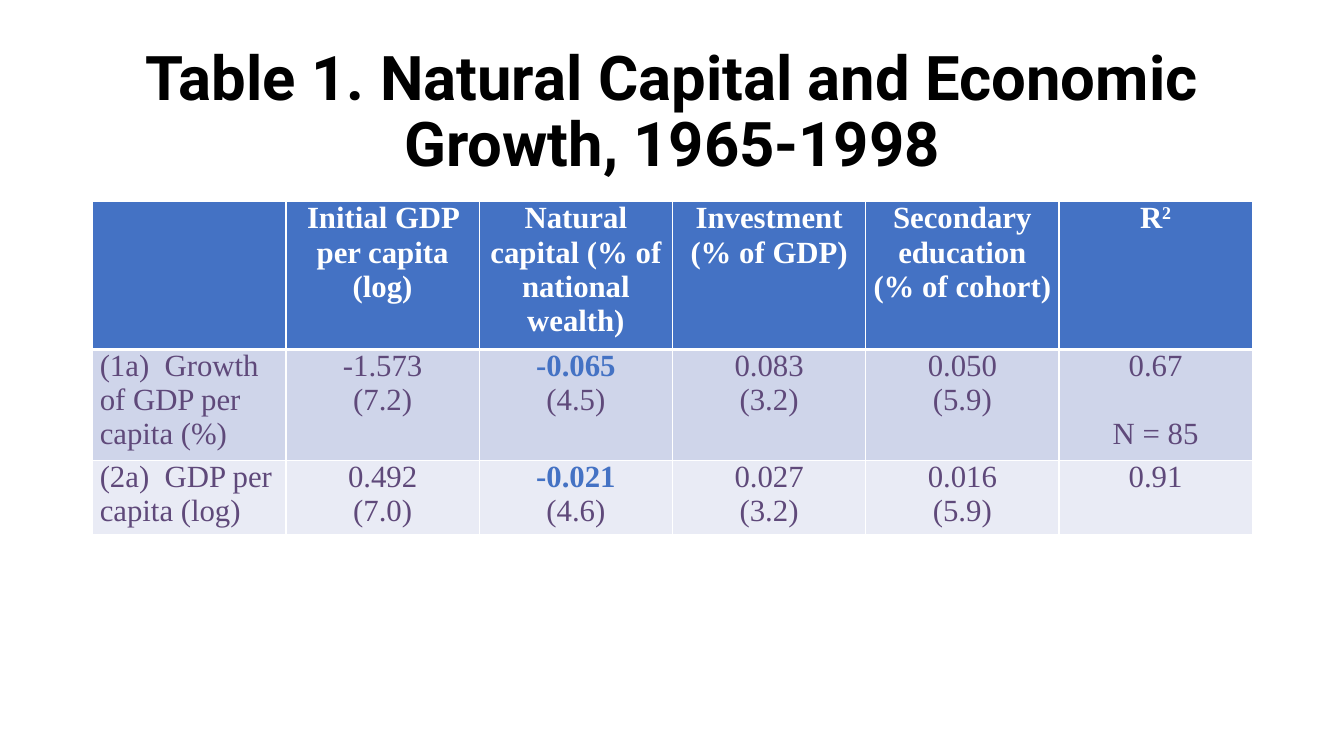
from lxml import etree
from pptx import Presentation
from pptx.dml.color import RGBColor
from pptx.enum.text import MSO_ANCHOR, PP_ALIGN
from pptx.oxml.ns import qn
from pptx.util import Inches, Pt

TITLE = "Table 1. Natural Capital and Economic Growth, 1965-1998"
# Each cell is a list of paragraphs
HEADER = [
    [],
    ["Initial GDP per capita (log)"],
    ["Natural capital (% of national wealth)"],
    ["Investment (% of GDP)"],
    ["Secondary education", "(% of cohort)"],
    ["R2"],
]
RESULTS = [
    [["(1a)  Growth of GDP per capita (%)"], ["-1.573", "(7.2)"], ["-0.065", "(4.5)"],
     ["0.083", "(3.2)"], ["0.050", "(5.9)"], ["0.67", "N = 85"]],
    [["(2a)  GDP per capita (log)"], ["0.492", "(7.0)"], ["-0.021", "(4.6)"],
     ["0.027", "(3.2)"], ["0.016", "(5.9)"], ["0.91"]],
]
ROWS = [HEADER] + RESULTS
ROW_HEIGHTS = [1.35, 1.01, 0.68]
ROW_FILLS = ["4472C4", "CFD5EA", "E9EBF5"]
LEFT, WIDTH = 0.92, 11.5
NATURAL_CAPITAL = 2
WHITE, PURPLE, BLUE = "FFFFFF", "5F497A", "4472C4"


def rgb(value):
    return RGBColor.from_string(value)


def add_text(p, text, size=22, font="Times New Roman", color=PURPLE, bold=False,
             align=PP_ALIGN.CENTER, superscript=False):
    p.alignment = align
    r = p.add_run()
    r.text = text
    r.font.size, r.font.name, r.font.bold = Pt(size), font, bold
    r.font.color.rgb = rgb(color)
    if superscript:
        r.font._element.set("baseline", "30000")


def set_borders(cell, top, bottom):
    """Draw white cell edges; top and bottom are widths in points."""
    tc_pr = cell._tc.get_or_add_tcPr()
    edges = {"a:lnL": 1, "a:lnR": 1, "a:lnT": top, "a:lnB": bottom}
    for i, (tag, width) in enumerate(edges.items()):
        ln = etree.Element(qn(tag), w=str(Pt(width)))
        fill = etree.SubElement(ln, qn("a:solidFill"))
        etree.SubElement(fill, qn("a:srgbClr"), val=WHITE)
        tc_pr.insert(i, ln)


def fill_cell(cell, row, col, lines):
    cell.margin_left = cell.margin_right = Inches(0.07)
    cell.margin_top = cell.margin_bottom = 0
    set_borders(cell, 3 if row == 1 else 1, 3 if row == 0 else 1)
    cell.fill.solid()
    cell.fill.fore_color.rgb = rgb(ROW_FILLS[row])
    tf = cell.text_frame
    for i, line in enumerate(lines):
        p = tf.paragraphs[0] if i == 0 else tf.add_paragraph()
        if row == 0:
            base, power = ("R", "2") if line == "R2" else (line, "")
            add_text(p, base, color=WHITE, bold=True)
            if power:
                add_text(p, power, color=WHITE, bold=True, superscript=True)
            continue
        key = col == NATURAL_CAPITAL and i == 0
        add_text(p, line, color=BLUE if key else PURPLE, bold=key,
                 align=PP_ALIGN.LEFT if col == 0 else PP_ALIGN.CENTER)
        if line.startswith("N ="):
            p.space_before = Pt(24.3)


prs = Presentation()
prs.slide_width, prs.slide_height = Inches(13.33), Inches(7.5)
s = prs.slides.add_slide(prs.slide_layouts[6])

tf = s.shapes.add_textbox(Inches(LEFT), Inches(0.4), Inches(WIDTH), Inches(1.45)).text_frame
tf.word_wrap = True
tf.vertical_anchor = MSO_ANCHOR.MIDDLE
tf.paragraphs[0].line_spacing = 0.9
add_text(tf.paragraphs[0], TITLE, size=44, font="Roboto", color="000000", bold=True)

table = s.shapes.add_table(len(ROWS), len(HEADER), Inches(LEFT), Inches(2),
                           Inches(WIDTH), Inches(sum(ROW_HEIGHTS))).table
for row, (cells, height) in enumerate(zip(ROWS, ROW_HEIGHTS)):
    table.rows[row].height = Inches(height)
    for col, lines in enumerate(cells):
        fill_cell(table.cell(row, col), row, col, lines)

prs.save("out.pptx")
